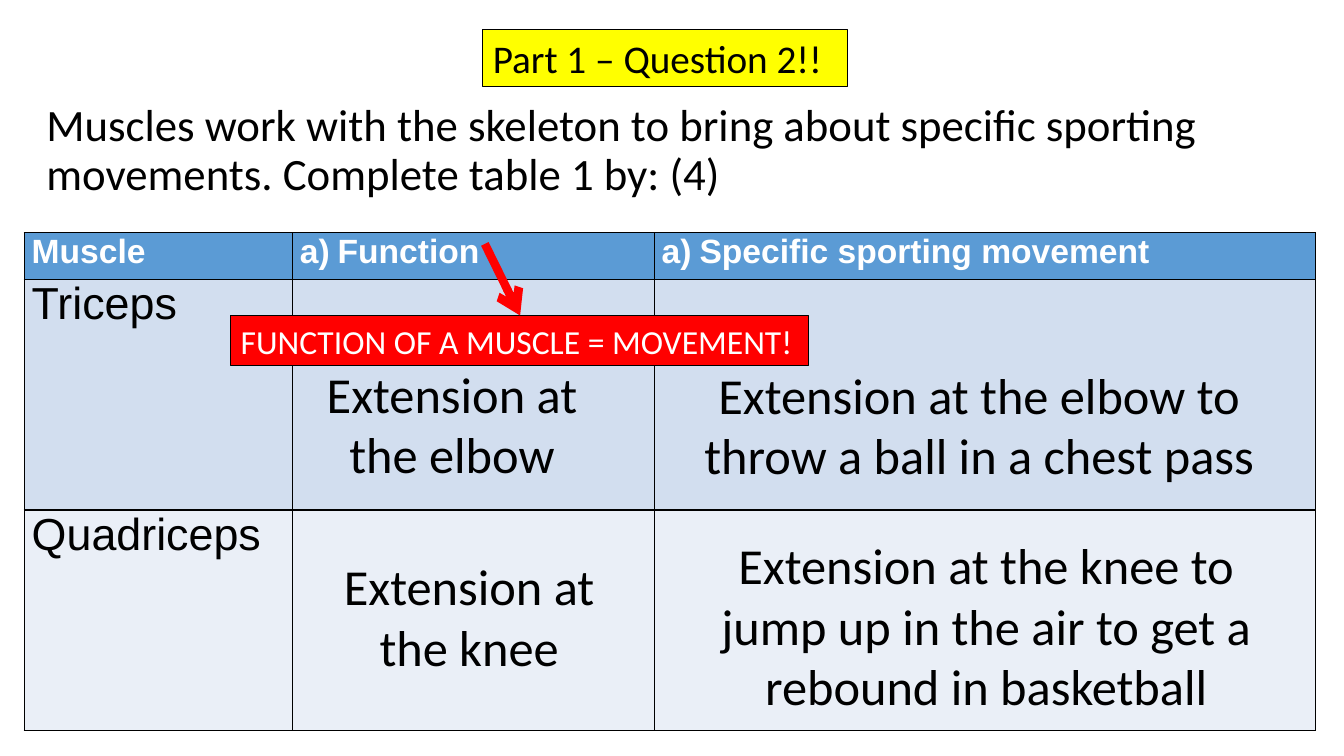
from dataclasses import dataclass

from lxml.etree import SubElement
from pptx import Presentation
from pptx.dml.color import RGBColor
from pptx.enum.shapes import MSO_CONNECTOR, MSO_SHAPE
from pptx.enum.text import MSO_ANCHOR, MSO_AUTO_SIZE, PP_ALIGN
from pptx.oxml.ns import qn
from pptx.slide import Slide
from pptx.table import _Cell
from pptx.text.text import TextFrame
from pptx.util import Pt

BLACK, WHITE, RED, YELLOW = "000000", "FFFFFF", "FF0000", "FFFF00"
HEADER_BLUE, BAND_DARK, BAND_LIGHT = "5B9BD5", "D2DEEF", "EAEFF7"


@dataclass
class Box:
    left: float
    top: float
    width: float
    height: float

    def lengths(self) -> tuple[Pt, Pt, Pt, Pt]:
        return Pt(self.left), Pt(self.top), Pt(self.width), Pt(self.height)


@dataclass
class Label:
    text: str
    box: Box
    size: float
    fill: str
    color: str


@dataclass
class Answer:
    text: str
    box: Box


@dataclass
class Row:
    cells: tuple[str, str, str]
    height: float
    fill: str
    color: str
    size: float
    bold: bool


QUESTION = ("Muscles work with the skeleton to bring about specific sporting "
            "movements. Complete table 1 by: (4)")
QUESTION_BOX = Box(25.92, 56.16, 912.96, 104.4)

TABLE_BOX = Box(17.28, 166.32, 922.32, 355.68)
COLUMN_WIDTHS = (191.52, 258.48, 472.32)
ROWS = (
    Row(("Muscle", "Function", "Specific sporting movement "), 33.12, HEADER_BLUE, WHITE, 24, True),
    Row(("Triceps", "", ""), 164.88, BAND_DARK, BLACK, 32, False),
    Row(("Quadriceps", "", ""), 157.68, BAND_LIGHT, BLACK, 32, False),
)
LABELS = (
    Label("Part 1 – Question 2!!", Box(344.88, 20.88, 260.64, 41.04), 28, YELLOW, BLACK),
    Label("FUNCTION OF A MUSCLE = MOVEMENT!", Box(164.88, 225.36, 412.56, 36), 24, RED, WHITE),
)
ANSWERS = (
    Answer("Extension at the elbow", Box(217.44, 255.6, 210.96, 94.32)),
    Answer("Extension at the knee", Box(229.68, 393.12, 210.96, 94.32)),
    Answer("Extension at the elbow to throw a ball in a chest pass",
           Box(480.24, 256.32, 438.48, 94.32)),
    Answer("Extension at the knee to jump up in the air to get a rebound in basketball",
           Box(483.12, 378, 442.8, 138.24)),
)


def rgb(color: str) -> RGBColor:
    return RGBColor.from_string(color)


def write(frame: TextFrame, text: str, size: float, color: str, align: PP_ALIGN,
          font_name: str = "Calibri", bold: bool = False) -> None:
    frame.text = text
    frame.word_wrap = True
    paragraph = frame.paragraphs[0]
    paragraph.alignment = align
    for run in paragraph.runs:
        run.font.name = font_name
        run.font.size = Pt(size)
        run.font.bold = bold
        run.font.color.rgb = rgb(color)


def add_question(slide: Slide) -> None:
    question = slide.shapes.title
    question.left, question.top, question.width, question.height = QUESTION_BOX.lengths()
    frame = question.text_frame
    write(frame, QUESTION, 32, BLACK, PP_ALIGN.LEFT)
    frame.auto_size = MSO_AUTO_SIZE.NONE
    frame.vertical_anchor = MSO_ANCHOR.MIDDLE
    frame.paragraphs[0].line_spacing = 0.9


def add_borders(cell: _Cell) -> None:
    properties = cell._tc.get_or_add_tcPr()
    for position, side in enumerate(("a:lnL", "a:lnR", "a:lnT", "a:lnB")):
        border = SubElement(properties, qn(side), w=str(Pt(1)))
        SubElement(SubElement(border, qn("a:solidFill")), qn("a:srgbClr"), val=BLACK)
        properties.insert(position, border)


def add_letter(cell: _Cell) -> None:
    properties = cell.text_frame.paragraphs[0]._p.get_or_add_pPr()
    properties.set("marL", str(Pt(27)))
    properties.set("indent", str(Pt(-27)))
    SubElement(properties, qn("a:buFont"), typeface="+mj-lt")
    SubElement(properties, qn("a:buAutoNum"), type="alphaLcParenR")


def add_muscle_table(slide: Slide) -> None:
    muscles = slide.shapes.add_table(len(ROWS), len(COLUMN_WIDTHS), *TABLE_BOX.lengths()).table
    for column, width in zip(muscles.columns, COLUMN_WIDTHS):
        column.width = Pt(width)
    for row_index, row in enumerate(ROWS):
        muscles.rows[row_index].height = Pt(row.height)
        for column_index, text in enumerate(row.cells):
            cell = muscles.cell(row_index, column_index)
            cell.margin_left = cell.margin_right = Pt(5.4)
            cell.margin_top = cell.margin_bottom = Pt(0)
            cell.fill.solid()
            cell.fill.fore_color.rgb = rgb(row.fill)
            add_borders(cell)
            if text:
                write(cell.text_frame, text, row.size, row.color, PP_ALIGN.JUSTIFY,
                      "Arial", row.bold)
            if row_index == 0 and column_index > 0:
                add_letter(cell)


def add_label(slide: Slide, label: Label) -> None:
    panel = slide.shapes.add_shape(MSO_SHAPE.RECTANGLE, *label.box.lengths())
    panel.shadow.inherit = False
    panel.fill.solid()
    panel.fill.fore_color.rgb = rgb(label.fill)
    panel.line.color.rgb = rgb(BLACK)
    panel.line.width = Pt(0.75)
    frame = panel.text_frame
    write(frame, label.text, label.size, label.color, PP_ALIGN.LEFT)
    frame.vertical_anchor = MSO_ANCHOR.TOP
    frame.margin_right = Pt(0)


def add_answer(slide: Slide, answer: Answer) -> None:
    frame = slide.shapes.add_textbox(*answer.box.lengths()).text_frame
    write(frame, answer.text, 36, BLACK, PP_ALIGN.CENTER)


def add_function_arrow(slide: Slide) -> None:
    arrow = slide.shapes.add_connector(
        MSO_CONNECTOR.STRAIGHT, Pt(346.32), Pt(174.24), Pt(371.52), Pt(225.36))
    arrow.line.color.rgb = rgb(RED)
    arrow.line.width = Pt(6)
    SubElement(arrow.line._get_or_add_ln(), qn("a:tailEnd"), type="arrow")
    SubElement(arrow._element.spPr, qn("a:effectLst"))


def main() -> None:
    deck = Presentation()
    deck.slide_width, deck.slide_height = Pt(960), Pt(540)
    slide = deck.slides.add_slide(deck.slide_layouts.get_by_name("Title Only"))

    # Question and table
    add_question(slide)
    add_muscle_table(slide)

    # Labels and answers over the table
    for label in LABELS:
        add_label(slide, label)
    for answer in ANSWERS:
        add_answer(slide, answer)

    # Pointer from the Function heading to its hint
    add_function_arrow(slide)
    deck.save("out.pptx")


if __name__ == "__main__":
    main()
